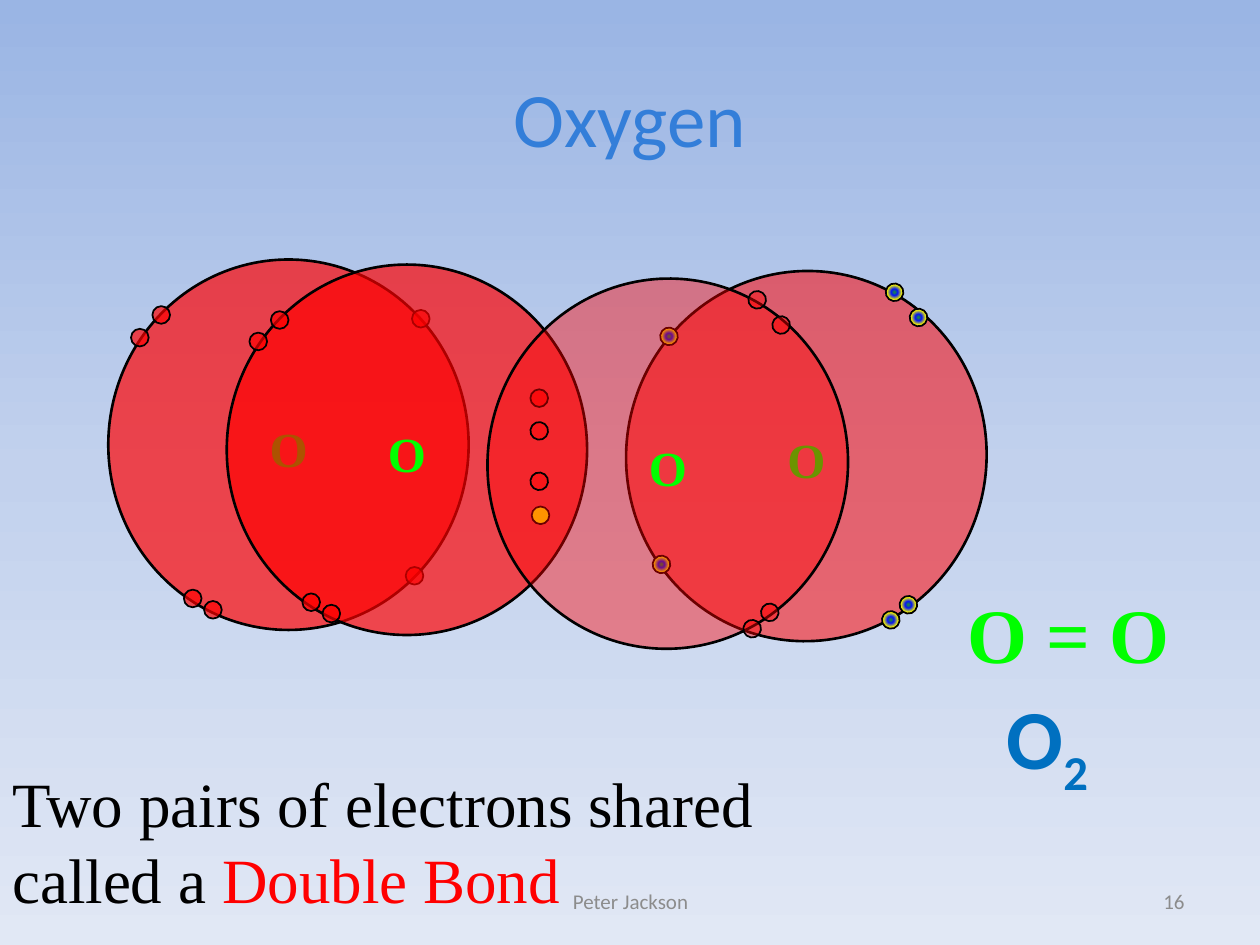
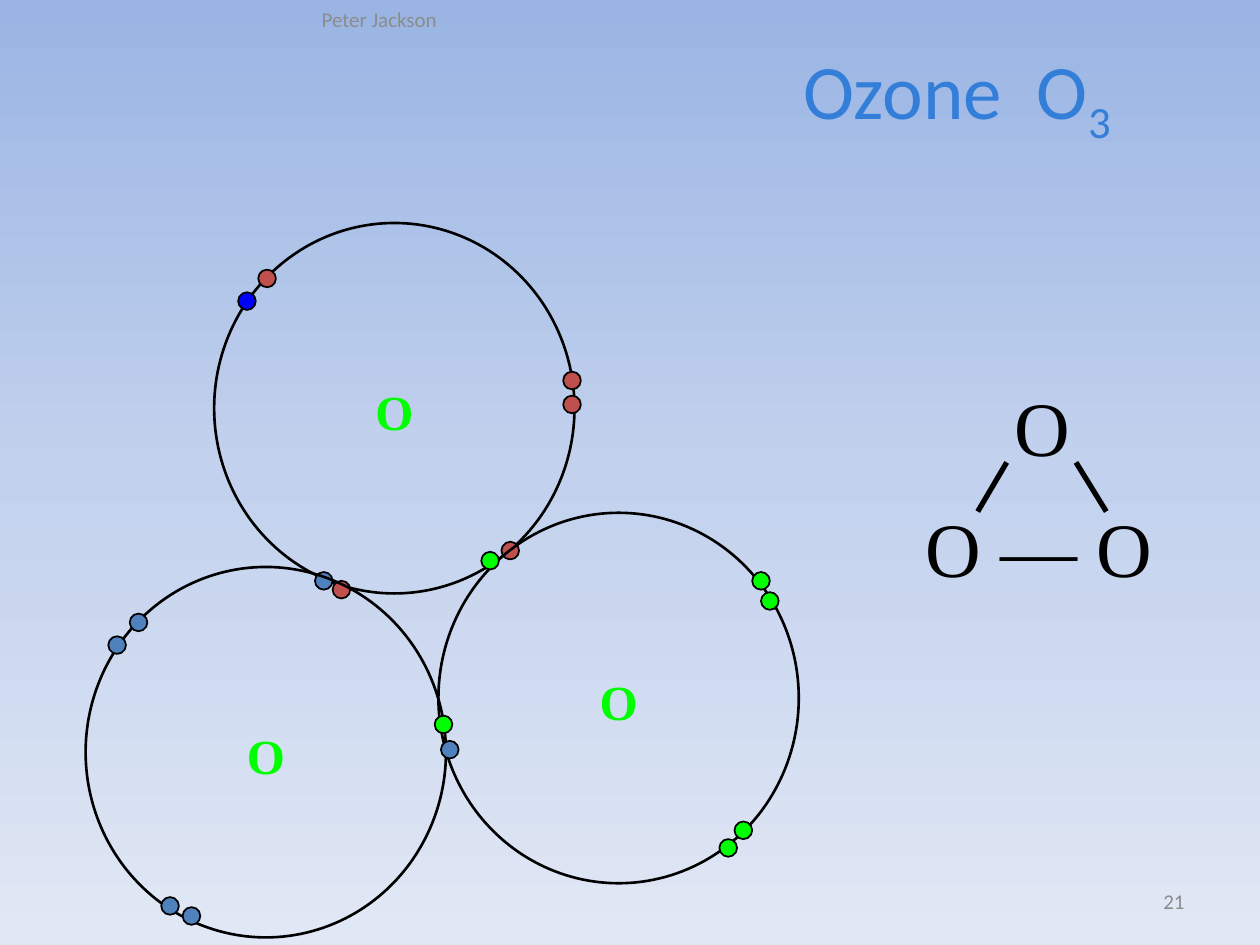
import pptx
import pptx.dml.color
import pptx.enum.shapes
import pptx.enum.text
import pptx.oxml
import pptx.oxml.ns
import pptx.util

Inches = pptx.util.Inches
Pt = pptx.util.Pt
qn = pptx.oxml.ns.qn
ALIGN = pptx.enum.text.PP_ALIGN
MID = pptx.enum.text.MSO_ANCHOR.MIDDLE

SANS, SERIF = "Calibri", "Times New Roman"
BLACK, RED, LIME, BLUE = "000000", "FF0000", "00FF00", "0000FF"
BRICK, STEEL, SEA, SKY, GRAY = "C0504D", "4F81BD", "0070C0", "337ED9", "8C8C8C"
SHADES = [(0, "9AB5E4"), (50, "C2D1ED"), (100, "E1E8F5")]
GEM = [(0, "A603AB"), (0, "1A8D48"), (21, "0819FB"), (52, "FFFF00"),
       (73, "EE3F17"), (88, "E81766"), (100, "A603AB")]
DOWN = '<a:lin ang="5400000" scaled="0"/>'
ROUND = ('<a:path path="circle"><a:fillToRect l="50000" t="50000" '
         'r="50000" b="50000"/></a:path>')
WIDE, HIGH, DOT = 2.86, 2.94, 0.14


def color(code):
    return pptx.dml.color.RGBColor.from_string(code)


def blend(props, stops, form):
    marks = "".join(
        f'<a:gs pos="{pos * 1000}"><a:srgbClr val="{code}"/></a:gs>'
        for pos, code in stops)
    grad = pptx.oxml.parse_xml(
        f'<a:gradFill {pptx.oxml.ns.nsdecls("a")} rotWithShape="1">'
        f'<a:gsLst>{marks}</a:gsLst>{form}</a:gradFill>')
    props.replace(props.find(qn("a:solidFill")), grad)


def fill(shape, paint, alpha=100):
    if paint is None:
        shape.fill.background()
        return
    shape.fill.solid()
    props = shape._element.spPr
    if paint is GEM:
        blend(props, GEM, ROUND)
        return
    shape.fill.fore_color.rgb = color(paint)
    if alpha < 100:
        tone = props.find(qn("a:solidFill")).find(qn("a:srgbClr"))
        tone.append(tone.makeelement(qn("a:alpha"), {"val": str(alpha * 1000)}))


def place(shape, box):
    shape.left, shape.top, shape.width, shape.height = map(Inches, box)


def ring(slide, box, paint, alpha, weight, turn):
    shape = slide.shapes.add_shape(
        pptx.enum.shapes.MSO_SHAPE.OVAL, *map(Inches, box))
    shape.shadow.inherit = False
    shape.rotation = turn
    fill(shape, paint, alpha)
    shape.line.color.rgb = color(BLACK)
    shape.line.width = Pt(weight)


def write(shape, parts, size, font, code, bold=False, align=None, anchor=None):
    frame = shape.text_frame
    frame.word_wrap = True
    if anchor is not None:
        frame.vertical_anchor = anchor
    para = frame.paragraphs[0]
    para.alignment = align
    para.text = parts[0]
    for part in parts[1:]:
        para.add_run().text = part
    for run in para.runs:
        run.font.size = Pt(size)
        run.font.name = font
        run.font.bold = bold
        run.font.color.rgb = color(code)
    return para.runs[-1]


def label(slide, box, parts, size, font, code, **style):
    shape = slide.shapes.add_textbox(*map(Inches, box))
    return write(shape, parts, size, font, code, **style)


def lower(run):
    run.font._element.set("baseline", "-25000")


def atom(slide, left, top, groups, paint=None, alpha=100, turn=0):
    ring(slide, (left, top, WIDE, HIGH), paint, alpha, 1.5, turn)
    for hue, spots in groups:
        for x, y in spots:
            ring(slide, (x, y, DOT, DOT), hue, alpha if hue == paint else 100,
                 1, turn)
    label(slide, (left + 1.09, top + 1.21, 0.68, 0.57), ["O"], 28, SERIF, LIME,
          bold=True, align=ALIGN.CENTER)


def bond(slide, start, end):
    line = slide.shapes.add_connector(
        pptx.enum.shapes.MSO_CONNECTOR.STRAIGHT, *map(Inches, start + end))
    line.line.color.rgb = color(BLACK)
    line.line.width = Pt(3)
    props = line._element.spPr
    props.append(props.makeelement(qn("a:effectLst"), {}))


def begin(deck, box, parts):
    slide = deck.slides.add_slide(deck.slide_layouts[5])
    title = slide.shapes.title
    place(title, box)
    last = write(title, parts, 44, SANS, SKY, align=ALIGN.CENTER, anchor=MID)
    return slide, last


def footer(slide, box, number):
    label(slide, (7.17, 6.95, 2.33, 0.4), [number], 12, SANS, GRAY,
          align=ALIGN.RIGHT, anchor=MID)
    label(slide, box, ["Peter Jackson"], 12, SANS, GRAY,
          align=ALIGN.CENTER, anchor=MID)


def oxygen(deck):
    slide, _ = begin(deck, (0.5, 0.3, 9, 1.25), ["Oxygen"])
    label(slide, (7.58, 4.61, 2.25, 0.83), ["O = O"], 44, SERIF, LIME, bold=True)
    note = label(slide, (0, 6.02, 6.56, 1.3),
                 ["Two pairs of electrons shared\ncalled a ", "Double Bond"],
                 36, SERIF, BLACK)
    note.font.color.rgb = color(RED)
    lower(label(slide, (7.89, 5.39, 1.23, 0.9), ["O", "2"], 48, SANS, SEA,
                bold=True))
    atom(slide, 0.86, 2.06,
         [(RED, [(1.21, 2.43), (3.27, 2.46), (1.46, 4.68), (3.22, 4.5),
                 (1.04, 2.61), (1.62, 4.77)])], RED, 68)
    atom(slide, 4.97, 2.15,
         [(GEM, [(7.22, 2.45), (7, 4.85), (7.03, 2.25), (7.14, 4.73),
                 (5.24, 2.6), (5.18, 4.41)])], RED, 53, 8.4)
    atom(slide, 1.8, 2.1,
         [(RED, [(2.15, 2.47), (2.4, 4.71), (1.98, 2.64), (2.56, 4.8),
                 (4.21, 3.09)]),
          ("FFFF00", [(4.22, 4.02)])], RED, 68)
    atom(slide, 3.87, 2.21,
         [(RED, [(6.13, 2.51), (5.9, 4.92), (5.94, 2.31), (6.04, 4.79),
                 (4.21, 3.35), (4.21, 3.75)])], RED, 42, 8.4)
    footer(slide, (3.42, 6.95, 3.17, 0.4), "16")


def ozone(deck):
    slide, last = begin(deck, (5.39, 0.13, 4.41, 1.25), ["Ozone  O", "3"])
    lower(last)
    atom(slide, 1.7, 1.77,
         [(STEEL, [(2.5, 4.54)]),
          (BLUE, [(1.89, 2.32)]),
          (BRICK, [(2.05, 2.14), (4.47, 2.95), (4.47, 3.14), (3.98, 4.3),
                   (2.64, 4.61)])])
    atom(slide, 3.48, 4.07,
         [(LIME, [(6.04, 4.7), (5.71, 6.66), (5.97, 4.54), (3.82, 4.38),
                  (5.83, 6.52)])])
    label(slide, (7.25, 3.92, 2.25, 0.83), ["O — O"], 44, SERIF, BLACK)
    atom(slide, 0.68, 4.5,
         [(STEEL, [(1.03, 4.87), (3.5, 5.88), (1.28, 7.12), (0.86, 5.05),
                   (1.45, 7.2)]),
          (LIME, [(3.45, 5.68)])])
    label(slide, (7.95, 2.96, 0.91, 0.83), ["O"], 44, SERIF, BLACK)
    bond(slide, (7.76, 4.06), (7.99, 3.67))
    bond(slide, (8.78, 4.06), (8.54, 3.67))
    footer(slide, (0, 0, 6.02, 0.3), "21")


def main():
    deck = pptx.Presentation()
    deck.slide_width, deck.slide_height = Inches(10), Inches(7.5)
    master = deck.slide_master
    master.background.fill.solid()
    blend(next(master._element.iter(qn("p:bgPr"))), SHADES, DOWN)
    oxygen(deck)
    ozone(deck)
    deck.save("out.pptx")


if __name__ == "__main__":
    main()
